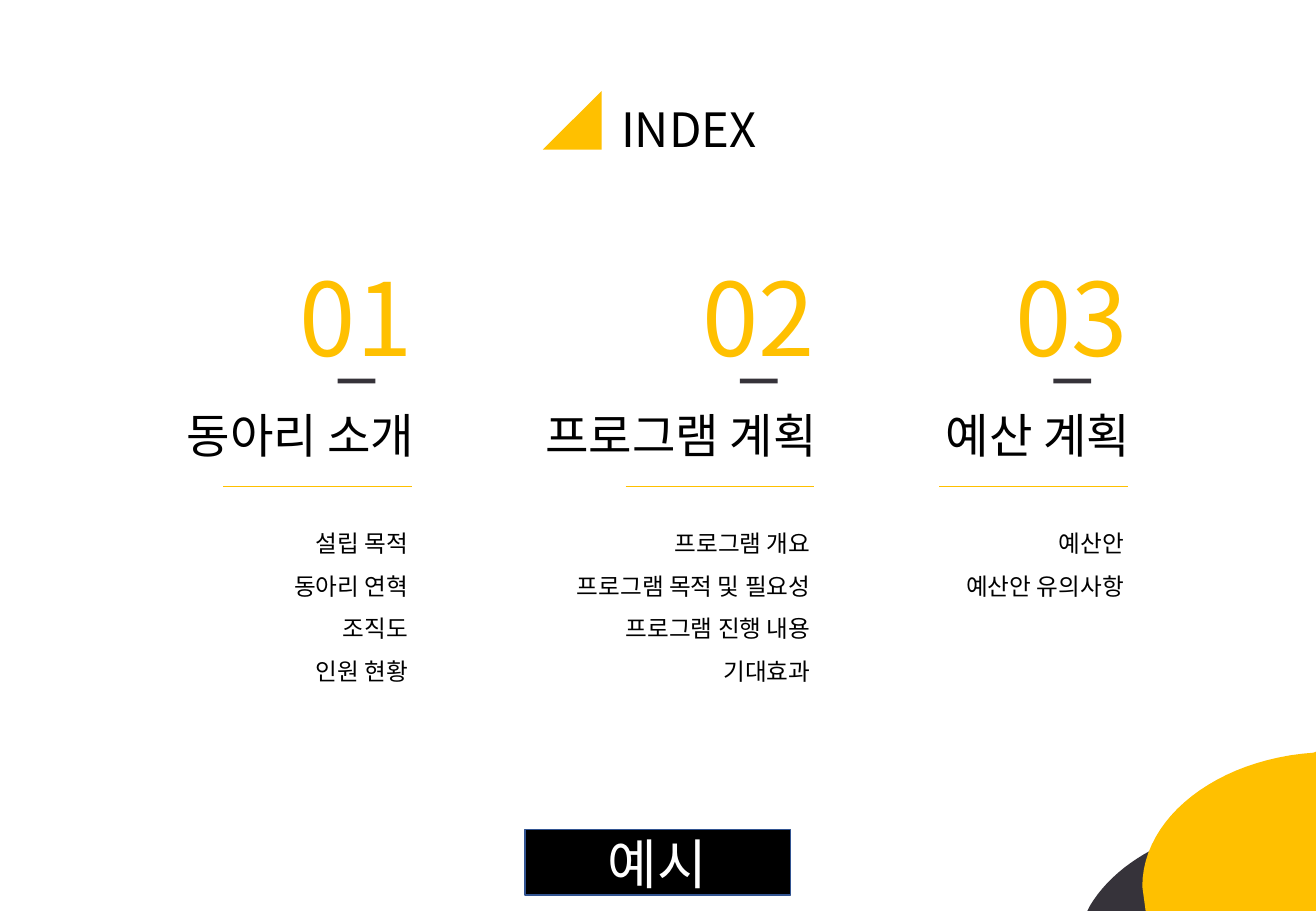
from dataclasses import dataclass

from lxml.etree import SubElement
from pptx import Presentation
from pptx.dml.color import RGBColor
from pptx.enum.shapes import MSO_CONNECTOR, MSO_SHAPE
from pptx.enum.text import MSO_ANCHOR, MSO_AUTO_SIZE, PP_ALIGN
from pptx.oxml.ns import qn
from pptx.shapes.autoshape import Shape
from pptx.slide import Slide
from pptx.util import Cm, Pt

Point = tuple[float, float]


@dataclass(frozen=True)
class Theme:
    font: str = "Noto Sans CJK KR"
    yellow: RGBColor = RGBColor(0xFF, 0xC0, 0x00)
    dark: RGBColor = RGBColor(0x36, 0x33, 0x3A)
    black: RGBColor = RGBColor(0, 0, 0)
    white: RGBColor = RGBColor(0xFF, 0xFF, 0xFF)
    badge_line: RGBColor = RGBColor(0x32, 0x54, 0x91)
    number_size: int = 60
    badge_size: int = 32
    heading_size: int = 28
    list_size: int = 14


@dataclass(frozen=True)
class Section:
    """One index column; right is the right end of its rule, in cm."""
    number: str
    heading: str
    topics: list[str]
    right: float


@dataclass(frozen=True)
class Curve:
    """A cubic Bezier segment, in cm."""
    start: Point
    control_1: Point
    control_2: Point
    end: Point

    def points(self, steps: int = 24) -> list[Point]:
        result = []
        for step in range(steps + 1):
            t = step / steps
            weights = ((1 - t) ** 3, 3 * t * (1 - t) ** 2, 3 * t * t * (1 - t), t ** 3)
            corners = (self.start, self.control_1, self.control_2, self.end)
            result.append((sum(w * x for w, (x, _) in zip(weights, corners)),
                           sum(w * y for w, (_, y) in zip(weights, corners))))
        return result


THEME = Theme()
WIDTH, HEIGHT = 27.51, 19.05
SECTIONS = [
    Section("01", "동아리 소개", ["설립 목적", "동아리 연혁", "조직도", "인원 현황"], 8.61),
    Section("02", "프로그램 계획",
            ["프로그램 개요", "프로그램 목적 및 필요성", "프로그램 진행 내용", "기대효과"], 17.02),
    Section("03", "예산 계획", ["예산안", "예산안 유의사항"], 23.57),
]
DARK_CURVE = Curve((22.78, 18.95), (23.39, 17.93), (24.79, 17.22), (26.44, 17.22))
YELLOW_CURVE = Curve((23.88, 18.54), (23.88, 17.09), (25.45, 15.88), (27.46, 15.74))


def place(shape: Shape, left: float, top: float, width: float, height: float) -> None:
    shape.left, shape.top = Cm(left), Cm(top)
    shape.width, shape.height = Cm(width), Cm(height)


def write(shape: Shape, lines: list[str], size: int, color: RGBColor, align: PP_ALIGN,
          spacing: float = 1.0, anchor: MSO_ANCHOR = MSO_ANCHOR.TOP,
          wrap: bool = True) -> None:
    frame = shape.text_frame
    frame.text = "\n".join(lines)
    frame.word_wrap = wrap
    frame.auto_size = MSO_AUTO_SIZE.NONE
    frame.vertical_anchor = anchor
    for paragraph in frame.paragraphs:
        paragraph.alignment = align
        paragraph.line_spacing = spacing
        paragraph.space_before = Pt(0)
        paragraph.font.size = Pt(size)
        paragraph.font.bold = False
        paragraph.font.color.rgb = color
        paragraph.font.name = THEME.font
        properties = paragraph._p.get_or_add_pPr()
        defaults = properties.find(qn("a:defRPr"))
        SubElement(defaults, qn("a:ea")).set("typeface", THEME.font)
        properties.set("marL", "0")
        properties.set("indent", "0")
        defaults.addprevious(SubElement(properties, qn("a:buNone")))


def paint(shape: Shape, color: RGBColor) -> None:
    shape.shadow.inherit = False
    shape.fill.solid()
    shape.fill.fore_color.rgb = color
    shape.line.fill.background()


def add_block(slide: Slide, kind: MSO_SHAPE, left: float, top: float, width: float,
              height: float, color: RGBColor) -> Shape:
    block = slide.shapes.add_shape(kind, Cm(left), Cm(top), Cm(width), Cm(height))
    paint(block, color)
    return block


def add_outline(slide: Slide, points: list[Point], color: RGBColor) -> None:
    corners = [(Cm(x), Cm(y)) for x, y in points]
    builder = slide.shapes.build_freeform(*corners[0])
    builder.add_line_segments(corners[1:], close=True)
    paint(builder.convert_to_shape(), color)


def add_text(slide: Slide, text: str, left: float, top: float, width: float,
             height: float, size: int, color: RGBColor, align: PP_ALIGN) -> None:
    box = slide.shapes.add_textbox(Cm(left), Cm(top), Cm(width), Cm(height))
    write(box, [text], size, color, align)


def add_rule(slide: Slide, left: float, right: float, top: float) -> None:
    rule = slide.shapes.add_connector(
        MSO_CONNECTOR.STRAIGHT, Cm(left), Cm(top), Cm(right), Cm(top))
    rule.line.color.rgb = THEME.yellow
    rule.line.width = Pt(0.5)
    SubElement(rule._element.spPr, qn("a:effectLst"))


def add_section(slide: Slide, section: Section, body: Shape) -> None:
    right = section.right
    add_text(slide, section.number, right - 2.59, 5.21, 3.1, 2.82,
             THEME.number_size, THEME.yellow, PP_ALIGN.LEFT)
    add_block(slide, MSO_SHAPE.RECTANGLE, right - 1.55, 7.92, 0.79, 0.1, THEME.dark)
    add_text(slide, section.heading, right - 6.3, 8.38, 6.6, 1.45,
             THEME.heading_size, THEME.black, PP_ALIGN.RIGHT)
    add_rule(slide, right - 3.94, right, 10.18)
    place(body, right - 5.82, 10.64, 6, 3.84)
    write(body, section.topics, THEME.list_size, THEME.black, PP_ALIGN.RIGHT, 1.5)


def main() -> None:
    presentation = Presentation()
    presentation.slide_width, presentation.slide_height = Cm(WIDTH), Cm(HEIGHT)
    layout = presentation.slide_layouts.get_by_name("Comparison")
    slide = presentation.slides.add_slide(layout)
    title, *bodies = slide.placeholders

    triangle = add_block(slide, MSO_SHAPE.RIGHT_TRIANGLE, 11.35, 1.9, 1.23, 1.23,
                         THEME.yellow)
    triangle._element.spPr.xfrm.set("flipH", "1")
    place(title, 12.73, 1.96, 3.45, 1.45)
    write(title, ["INDEX"], THEME.heading_size, THEME.black, PP_ALIGN.LEFT, wrap=False)

    for section, body in zip(SECTIONS, bodies):
        add_section(slide, section, body)
    for spare in bodies[len(SECTIONS):]:
        spare._element.getparent().remove(spare._element)

    badge = add_block(slide, MSO_SHAPE.RECTANGLE, 10.97, 17.35, 5.56, 1.37, THEME.black)
    badge.line.color.rgb = THEME.badge_line
    badge.line.width = Pt(1)
    write(badge, ["예시"], THEME.badge_size, THEME.white, PP_ALIGN.CENTER,
          anchor=MSO_ANCHOR.MIDDLE)

    add_outline(slide, [(22.73, HEIGHT), *DARK_CURVE.points(), (WIDTH, 17.32),
                        (WIDTH, HEIGHT)], THEME.dark)
    add_outline(slide, [(23.95, HEIGHT), *YELLOW_CURVE.points(), (WIDTH, 15.72),
                        (WIDTH, HEIGHT)], THEME.yellow)
    presentation.save("out.pptx")


if __name__ == "__main__":
    main()
